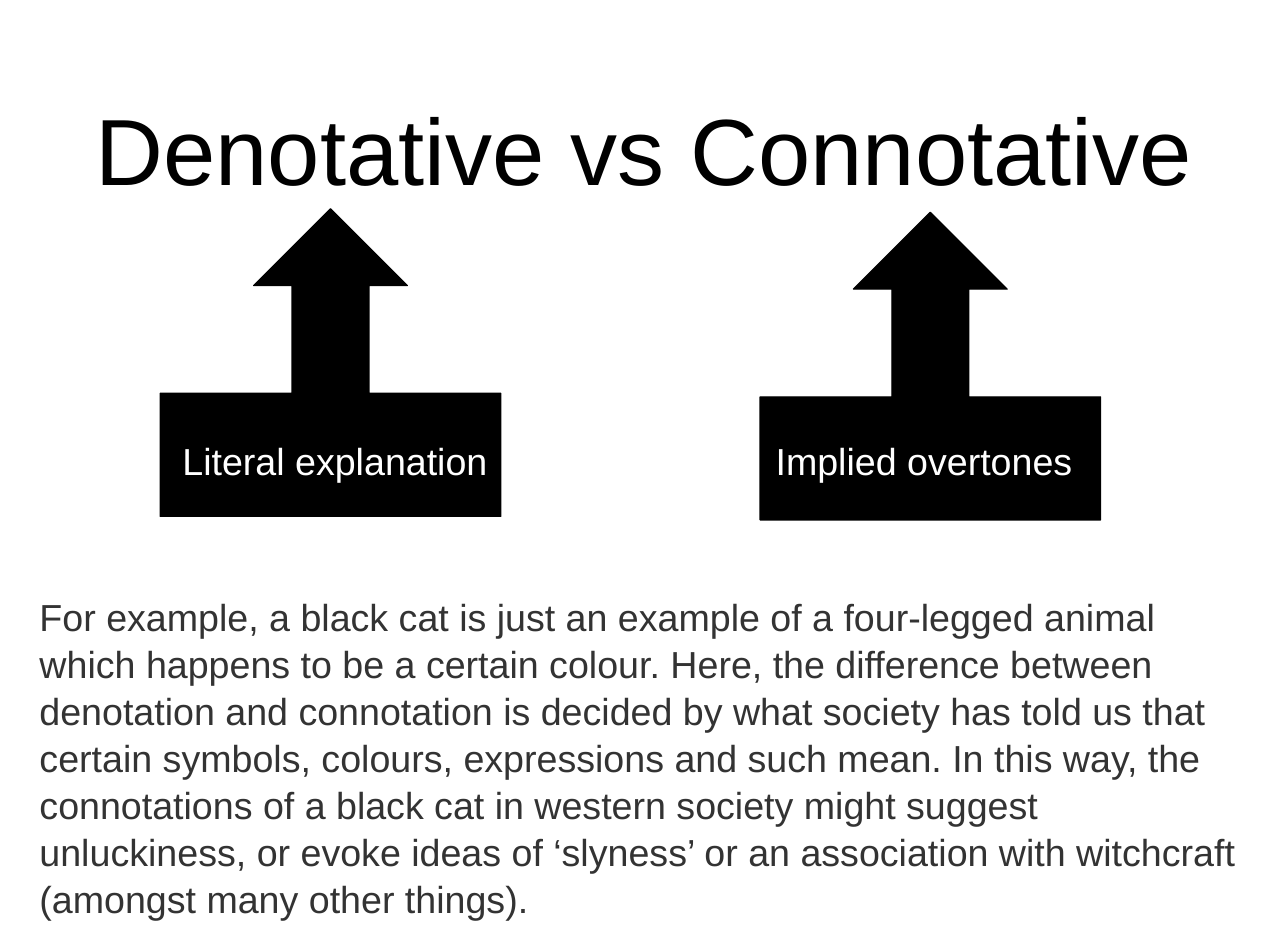
from pptx import Presentation
from pptx.dml.color import RGBColor
from pptx.enum.shapes import MSO_SHAPE as Shape
from pptx.enum.text import PP_ALIGN as Align
from pptx.util import Cm, Pt


def color(value):
    return RGBColor.from_string(value)


def add_text(slide, place, text, size, shade, align):
    box = slide.shapes.add_textbox(*[Cm(length) for length in place])
    frame = box.text_frame
    margins = {f"margin_{side}": Cm(0.25) for side in ("left", "top", "right", "bottom")}
    for name, value in {**margins, "word_wrap": True}.items():
        setattr(frame, name, value)
    para = frame.paragraphs[0]
    para.alignment = align
    para.line_spacing = 1.04
    span = para.add_run()
    span.text = text
    for name, value in {"name": "Arial", "size": Pt(size)}.items():
        setattr(span.font, name, value)
    span.font.color.rgb = color(shade)


deck = Presentation()
deck.slide_width, deck.slide_height = Cm(29.01), Cm(21.01)
slide = deck.slides.add_slide(deck.slide_layouts[6])

add_text(slide, (0, 1.7, 29.01, 2.49), "Denotative vs Connotative", 60, "000000", Align.CENTER)

callouts = [
    (3.61, 4.7, 3.81, "Literal explanation", Align.CENTER),
    (17.12, 4.78, 17.22, "Implied overtones", Align.LEFT),
]
for left, top, label_left, label, align in callouts:
    callout = slide.shapes.add_shape(Shape.UP_ARROW_CALLOUT, Cm(left), Cm(top), Cm(7.67), Cm(6.93))
    callout.shadow.inherit = False
    for index, ratio in enumerate((0.25, 0.25, 0.25, 0.4)):
        callout.adjustments[index] = ratio
    callout.fill.solid()
    callout.fill.fore_color.rgb = color("000000")
    callout.line.color.rgb = color("000000")
    callout.line.width = Pt(0.75)
    add_text(slide, (label_left, 9.58, 7.47, 1.75), label, 24, "FFFFFF", align)

example = (
    "For example, a black cat is just an example of a four-legged animal which happens "
    "to be a certain colour. Here, the difference between denotation and connotation is "
    "decided by what society has told us that certain symbols, colours, expressions and "
    "such mean. In this way, the connotations of a black cat in western society might "
    "suggest unluckiness, or evoke ideas of ‘slyness’ or an association with witchcraft "
    "(amongst many other things)."
)
add_text(slide, (0.64, 13.09, 27.61, 7.8), example, 24, "333333", Align.LEFT)

deck.save("out.pptx")
